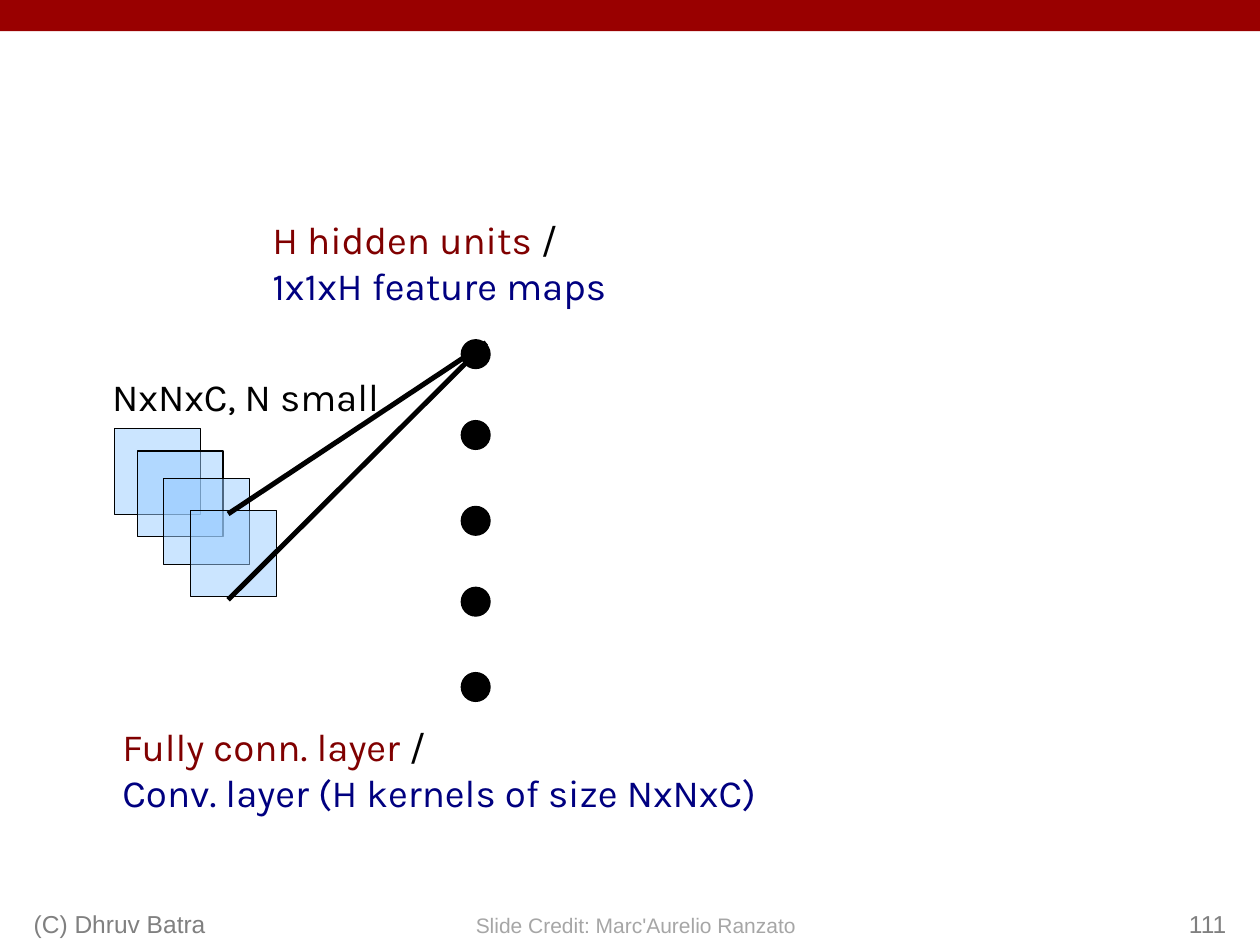
from dataclasses import dataclass

from lxml import etree
from pptx import Presentation
from pptx.dml.color import RGBColor
from pptx.enum.shapes import MSO_CONNECTOR, MSO_SHAPE
from pptx.enum.text import MSO_ANCHOR, PP_ALIGN
from pptx.oxml.ns import qn
from pptx.util import Cm, Pt

RECT, OVAL = MSO_SHAPE.RECTANGLE, MSO_SHAPE.OVAL
STRAIGHT = MSO_CONNECTOR.STRAIGHT
LEFT, CENTER, RIGHT = PP_ALIGN.LEFT, PP_ALIGN.CENTER, PP_ALIGN.RIGHT
TOP, BOTTOM = MSO_ANCHOR.TOP, MSO_ANCHOR.BOTTOM

BLACK, MAROON, NAVY = "000000", "800000", "000080"
BANNER_RED, MAP_BLUE = "990000", "99CCFF"
FOOTER_GRAY, CREDIT_GRAY = "808080", "A6A6A6"

LABEL_INSETS = (0.23, 0.18, 0.23, 0.1)
FOOTER_INSETS = (0.25, 0.13, 0.25, 0.13)


@dataclass(frozen=True)
class Box:
    left: float
    top: float
    width: float
    height: float

    def lengths(self) -> list[Cm]:
        return [Cm(v) for v in (self.left, self.top, self.width, self.height)]


@dataclass(frozen=True)
class Label:
    """Text lines, each made of (text, colour) pieces."""
    box: Box
    lines: tuple
    font: str = "Karla"
    size: int = 22
    align: PP_ALIGN = LEFT
    anchor: MSO_ANCHOR = TOP
    insets: tuple = LABEL_INSETS
    wrap: bool = True


def set_color(color_format, hex_color: str) -> None:
    color_format.rgb = RGBColor.from_string(hex_color)


def add_block(slide, kind: MSO_SHAPE, box: Box, fill: str,
              outlined: bool = True, opacity: int = 100) -> None:
    block = slide.shapes.add_shape(kind, *box.lengths())
    block.shadow.inherit = False
    block.fill.solid()
    set_color(block.fill.fore_color, fill)
    if opacity < 100:
        color = block.fill._xPr.find(qn("a:solidFill"))[0]
        etree.SubElement(color, qn("a:alpha"), val=str(opacity * 1000))
    if outlined:
        block.line.width = Pt(0.75)
        set_color(block.line.color, BLACK)
    else:
        block.line.fill.background()


def add_link(slide, start: tuple, end: tuple) -> None:
    link = slide.shapes.add_connector(STRAIGHT, *[Cm(v) for v in start + end])
    link.line.width = Pt(2.89)
    set_color(link.line.color, BLACK)
    etree.SubElement(link._element.spPr, qn("a:effectLst"))


def add_label(slide, label: Label) -> None:
    frame = slide.shapes.add_textbox(*label.box.lengths()).text_frame
    frame.word_wrap = label.wrap
    frame.vertical_anchor = label.anchor
    (frame.margin_left, frame.margin_top,
     frame.margin_right, frame.margin_bottom) = map(Cm, label.insets)
    frame.text = "\n".join("".join(text for text, _ in line)
                           for line in label.lines)
    for paragraph, line in zip(frame.paragraphs, label.lines):
        paragraph.alignment = label.align
        paragraph.runs[0].text = line[0][0]
        for text, _ in line[1:]:
            paragraph.add_run().text = text
        for run, (_, color) in zip(paragraph.runs, line):
            run.font.name = label.font
            run.font.size = Pt(label.size)
            set_color(run.font.color, color)


def footer(box: Box, text: str, align: PP_ALIGN) -> Label:
    return Label(box, (((text, FOOTER_GRAY),),), "Arial", 14, align, BOTTOM,
                 FOOTER_INSETS)


def main() -> None:
    deck = Presentation()
    deck.slide_width, deck.slide_height = Cm(25.4), Cm(19.05)
    slide = deck.slides.add_slide(deck.slide_layouts[6])

    # Banner
    add_block(slide, RECT, Box(0, 0, 25.4, 0.63), BANNER_RED, outlined=False)

    # Input feature maps
    add_label(slide, Label(Box(0.81, 7.34, 8.28, 1.55),
                           ((("NxNxC, N small", BLACK),),), align=CENTER))
    for left, top in ((2.31, 8.64), (2.77, 9.09), (3.3, 9.65), (3.84, 10.29)):
        add_block(slide, RECT, Box(left, top, 1.73, 1.73), MAP_BLUE, opacity=50)

    # Hidden units
    for top in (6.85, 8.48, 10.21, 11.84, 13.56):
        add_block(slide, OVAL, Box(9.3, top, 0.58, 0.58), BLACK)

    # Receptive field of the first unit
    for top in (10.36, 12.09):
        add_link(slide, (4.6, top), (9.8, 6.91))

    # Layer captions
    add_label(slide, Label(Box(5.26, 4.17, 8.86, 1.93), (
        (("H hidden units", MAROON), (" /", BLACK)),
        (("1x1xH feature maps", NAVY),))))
    add_label(slide, Label(Box(2.24, 14.4, 14.81, 1.93), (
        (("Fully conn. layer", MAROON), (" /", BLACK)),
        (("Conv. layer (H kernels of size NxNxC)", NAVY),))))

    # Credit and footer
    add_label(slide, Label(Box(9.3, 18.26, 7.04, 0.76),
                           ((("Slide Credit: Marc'Aurelio Ranzato",
                              CREDIT_GRAY),),),
                           "Arial", 12, CENTER, TOP, FOOTER_INSETS, False))
    add_label(slide, footer(Box(0.43, 17.78, 8.05, 1.27),
                            "(C) Dhruv Batra", LEFT))
    add_label(slide, footer(Box(19.69, 17.78, 5.28, 1.27), "111", RIGHT))

    deck.save("out.pptx")


if __name__ == "__main__":
    main()
